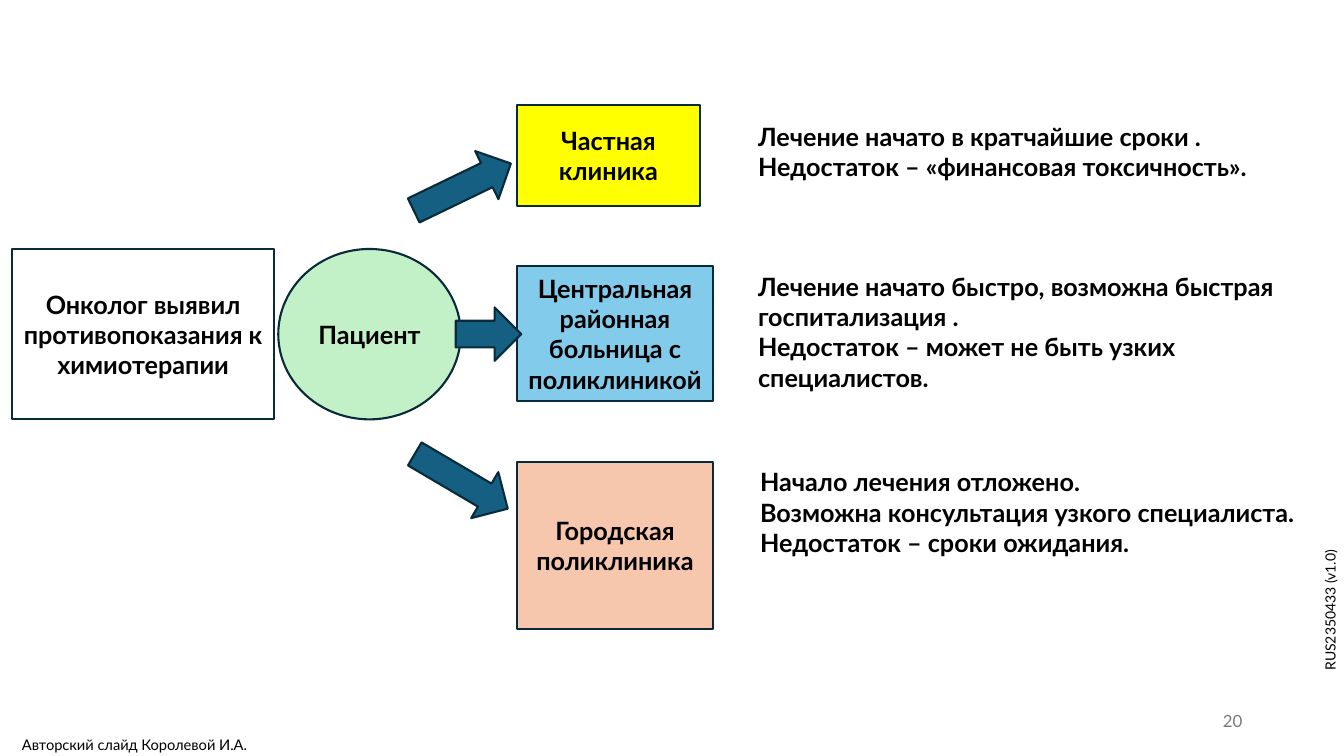
from pptx import Presentation
from pptx.dml.color import RGBColor
from pptx.enum.shapes import MSO_SHAPE as Kind
from pptx.enum.text import MSO_ANCHOR as Anchor, PP_ALIGN as Align
from pptx.util import Inches, Pt

FONT = "Lato"
BLACK, EDGE, ARROW = "000000", "092A39", "156082"


def color(code):
    return RGBColor.from_string(code)


def write(shape, text, size=18, bold=True, align=Align.LEFT,
          anchor=Anchor.TOP, ink=BLACK):
    frame = shape.text_frame
    frame.word_wrap = True
    frame.vertical_anchor = anchor
    frame.text = text
    for para in frame.paragraphs:
        para.alignment = align
        for run in para.runs:
            font = run.font
            font.name, font.size, font.bold = FONT, Pt(size), bold
            font.color.rgb = color(ink)


def add_form(slide, kind, box, fill, text="", turn=0):
    shape = slide.shapes.add_shape(kind, *map(Inches, box))
    shape.shadow.inherit = False
    shape.rotation = turn
    shape.fill.solid()
    shape.fill.fore_color.rgb = color(fill)
    shape.line.color.rgb = color(EDGE)
    shape.line.width = Pt(1.5)
    if text:
        write(shape, text, align=Align.CENTER, anchor=Anchor.MIDDLE)


def add_note(slide, box, text, turn=0, **style):
    note = slide.shapes.add_textbox(*map(Inches, box))
    note.rotation = turn
    write(note, text, **style)


# Starting point: the oncologist's finding and the patient
def add_start(slide, left, top, height):
    add_form(slide, Kind.RECTANGLE, (left, top, 2.6, height), "FFFFFF",
             "Онколог выявил противопоказания к химиотерапии")
    add_form(slide, Kind.OVAL, (left + 2.64, top, 1.81, height), "C2F1C8",
             "Пациент")


# One route: clinic, arrow leading to it, outcome beside it
def add_route(slide, left, top, clinic, arrow, outcome):
    name, fill, width, height = clinic
    add_form(slide, Kind.RECTANGLE, (left, top, width, height), fill, name)
    dx, dy, length, turn = arrow
    add_form(slide, Kind.RIGHT_ARROW, (left + dx, top + dy, length, 0.53),
             ARROW, turn=turn)
    text, shift, drop, depth = outcome
    add_note(slide, (left + shift, top + drop, 5.96, depth), text)


# Author, page number and document code
def add_footer(slide, width, height):
    add_note(slide, (0.12, height - 0.25, 6.67, 0.29),
             "Авторский слайд Королевой И.А.", size=10.5, bold=False)
    add_note(slide, (width - 3.91, height - 0.55, 3, 0.4), "20", size=12,
             bold=False, align=Align.RIGHT, anchor=Anchor.MIDDLE, ink="797979")
    add_note(slide, (width - 1.35, height - 2.1, 2.43, 0.27),
             "RUS2350433 (v1.0)", turn=270, size=10, bold=False)


ROUTES = [
    (1.04, ("Частная клиника", "FFFF00", 1.81, 1),
     (-1.08, 0.55, 1.07, 334.2),
     ("Лечение начато в кратчайшие сроки .\n"
      "Недостаток – «финансовая токсичность».", 2.29, 0.11, 0.71)),
    (2.64, ("Центральная районная больница с поликлиникой", "83CBEB",
            1.94, 1.34),
     (-0.61, 0.41, 0.65, 0),
     ("Лечение начато быстро, возможна быстрая госпитализация .\n"
      "Недостаток – может не быть узких специалистов.", 2.29, 0, 1.31)),
    (4.58, ("Городская поликлиника", "F6C6AD", 1.94, 1.66),
     (-1.09, -0.07, 1.07, 30.5),
     ("Начало лечения отложено.\n"
      "Возможна консультация узкого специалиста.\n"
      "Недостаток – сроки ожидания.", 2.31, 0, 1.01)),
]


def main():
    width, height = 13.33, 7.5
    deck = Presentation()
    deck.slide_width, deck.slide_height = Inches(width), Inches(height)
    slide = deck.slides.add_slide(deck.slide_layouts[6])
    add_start(slide, 0.12, 2.47, 1.69)
    for top, clinic, arrow, outcome in ROUTES:
        add_route(slide, 5.13, top, clinic, arrow, outcome)
    add_footer(slide, width, height)
    deck.save("out.pptx")


if __name__ == "__main__":
    main()
